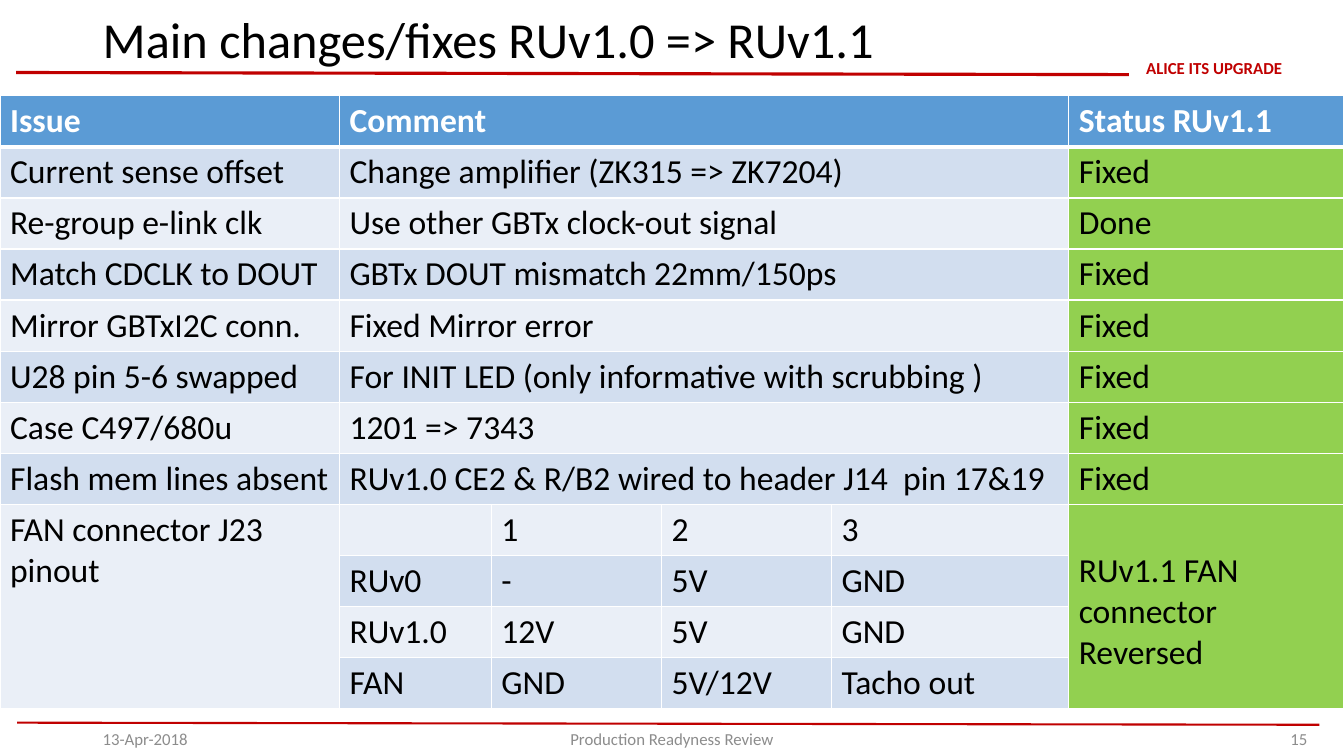
from lxml.etree import SubElement
from pptx import Presentation
from pptx.dml.color import RGBColor
from pptx.enum.shapes import MSO_CONNECTOR
from pptx.enum.text import MSO_ANCHOR, PP_ALIGN
from pptx.oxml.ns import qn
from pptx.util import Pt

COLORS = {"red": "C00000", "black": "000000", "white": "FFFFFF", "gray": "8C8C8C",
          "header": "5B9BD5", "band": "D2DEEF", "light": "EAEFF7", "done": "92D050"}
COLUMN_WIDTHS = [242.5, 108.5, 121.5, 121.5, 169.5, 196.5]
ROW_HEIGHT = 36.5
ISSUES = [
    ("Issue", "Comment", "Status RUv1.1"),
    ("Current sense offset", "Change amplifier (ZK315 => ZK7204)", "Fixed"),
    ("Re-group e-link clk", "Use other GBTx clock-out signal", "Done"),
    ("Match CDCLK to DOUT", "GBTx DOUT mismatch 22mm/150ps", "Fixed"),
    ("Mirror GBTxI2C conn.", "Fixed Mirror error", "Fixed"),
    ("U28 pin 5-6 swapped", "For INIT LED (only informative with scrubbing )", "Fixed"),
    ("Case C497/680u", "1201 => 7343", "Fixed"),
    ("Flash mem lines absent", "RUv1.0 CE2 & R/B2 wired to header J14  pin 17&19", "Fixed"),
]
FAN_PINOUT = [
    ("FAN connector J23 pinout", "", "1", "2", "3", "RUv1.1 FAN connector Reversed"),
    ("", "RUv0", "-", "5V", "GND", ""),
    ("", "RUv1.0", "12V", "5V", "GND", ""),
    ("", "FAN", "GND", "5V/12V", "Tacho out", ""),
]


class ReviewSlide:
    """Holds the style and the current slide, and adds its elements."""

    def __init__(self, slide, font="Calibri"):
        self.slide = slide
        self.font = font

    def color(self, name):
        return RGBColor.from_string(COLORS[name])

    def style(self, paragraph, size, color, bold=False, align=PP_ALIGN.LEFT):
        paragraph.alignment = align
        paragraph.font.name = self.font
        paragraph.font.size = Pt(size)
        paragraph.font.bold = bold
        paragraph.font.color.rgb = self.color(color)

    def title(self, text, left, top, width, height):
        heading = self.slide.shapes.title
        heading.left, heading.top = Pt(left), Pt(top)
        heading.width, heading.height = Pt(width), Pt(height)
        heading.text_frame.text = text
        heading.text_frame.vertical_anchor = MSO_ANCHOR.MIDDLE
        paragraph = heading.text_frame.paragraphs[0]
        paragraph.line_spacing = 0.9
        self.style(paragraph, 36, "black")

    def rule(self, start, end, width):
        line = self.slide.shapes.add_connector(
            MSO_CONNECTOR.STRAIGHT, *[Pt(value) for value in start + end])
        line.line.color.rgb = self.color("red")
        line.line.width = Pt(width)
        SubElement(line.element.spPr, qn("a:effectLst"))

    def label(self, text, left, top, width, height, color, align, bold=False):
        box = self.slide.shapes.add_textbox(Pt(left), Pt(top), Pt(width), Pt(height))
        frame = box.text_frame
        frame.word_wrap = True
        frame.vertical_anchor = MSO_ANCHOR.MIDDLE
        frame.margin_top = frame.margin_bottom = 0
        if bold:
            frame.margin_left = frame.margin_right = 0
        frame.text = text
        self.style(frame.paragraphs[0], 12, color, bold, align)

    def border(self, cell, side, width):
        line = SubElement(cell._tc.get_or_add_tcPr(), qn(f"a:ln{side}"), w=str(Pt(width)))
        fill = SubElement(line, qn("a:solidFill"))
        SubElement(fill, qn("a:srgbClr"), val=COLORS["white"])

    def cell(self, cell, text, row, fill):
        is_header = row == 0
        cell.text = text
        self.style(cell.text_frame.paragraphs[0], 24,
                   "white" if is_header else "black", is_header)
        for side, heavy in (("L", False), ("R", False), ("T", row == 1), ("B", is_header)):
            self.border(cell, side, 3 if heavy else 1)
        cell.fill.solid()
        cell.fill.fore_color.rgb = self.color(fill)

    def issue_table(self, left, top):
        rows = [(issue, comment, "", "", "", status) for issue, comment, status in ISSUES]
        rows += FAN_PINOUT
        status_column = len(COLUMN_WIDTHS) - 1
        table = self.slide.shapes.add_table(
            len(rows), len(COLUMN_WIDTHS), Pt(left), Pt(top),
            Pt(sum(COLUMN_WIDTHS)), Pt(ROW_HEIGHT * len(rows))).table
        table.horz_banding = False
        for column, width in zip(table.columns, COLUMN_WIDTHS):
            column.width = Pt(width)
        for r, texts in enumerate(rows):
            table.rows[r].height = Pt(ROW_HEIGHT)
            band = "band" if r % 2 else "light"
            for c, text in enumerate(texts):
                fill = "header" if r == 0 else "done" if c == status_column else band
                self.cell(table.cell(r, c), text, r, fill)
        for r in range(len(ISSUES)):
            table.cell(r, 1).merge(table.cell(r, status_column - 1))
        for c in (0, status_column):
            table.cell(len(ISSUES), c).merge(table.cell(len(rows) - 1, c))
        table.cell(len(ISSUES), status_column).margin_top = Pt(33)


def main():
    deck = Presentation()
    deck.slide_width, deck.slide_height = Pt(960), Pt(540)
    review = ReviewSlide(deck.slides.add_slide(deck.slide_layouts[5]))
    review.rule((11.5, 51.8), (806.4, 53.3), 2.25)
    review.rule((942.5, 517.7), (12.2, 516.2), 1.5)
    review.label("ALICE ITS UPGRADE", 815.8, 41.8, 103, 13.7, "red", PP_ALIGN.CENTER, True)
    review.title("Main changes/fixes RUv1.0 => RUv1.1", 66.2, 4.3, 740.2, 51.8)
    review.label("13-Apr-2018", 66.2, 518, 216, 20, "gray", PP_ALIGN.LEFT)
    review.label("Production Readyness Review", 318, 518, 324, 20, "gray", PP_ALIGN.CENTER)
    review.label("15", 831.6, 518, 109.4, 20, "gray", PP_ALIGN.RIGHT)
    review.issue_table(0, 68.4)
    deck.save("out.pptx")


if __name__ == "__main__":
    main()
